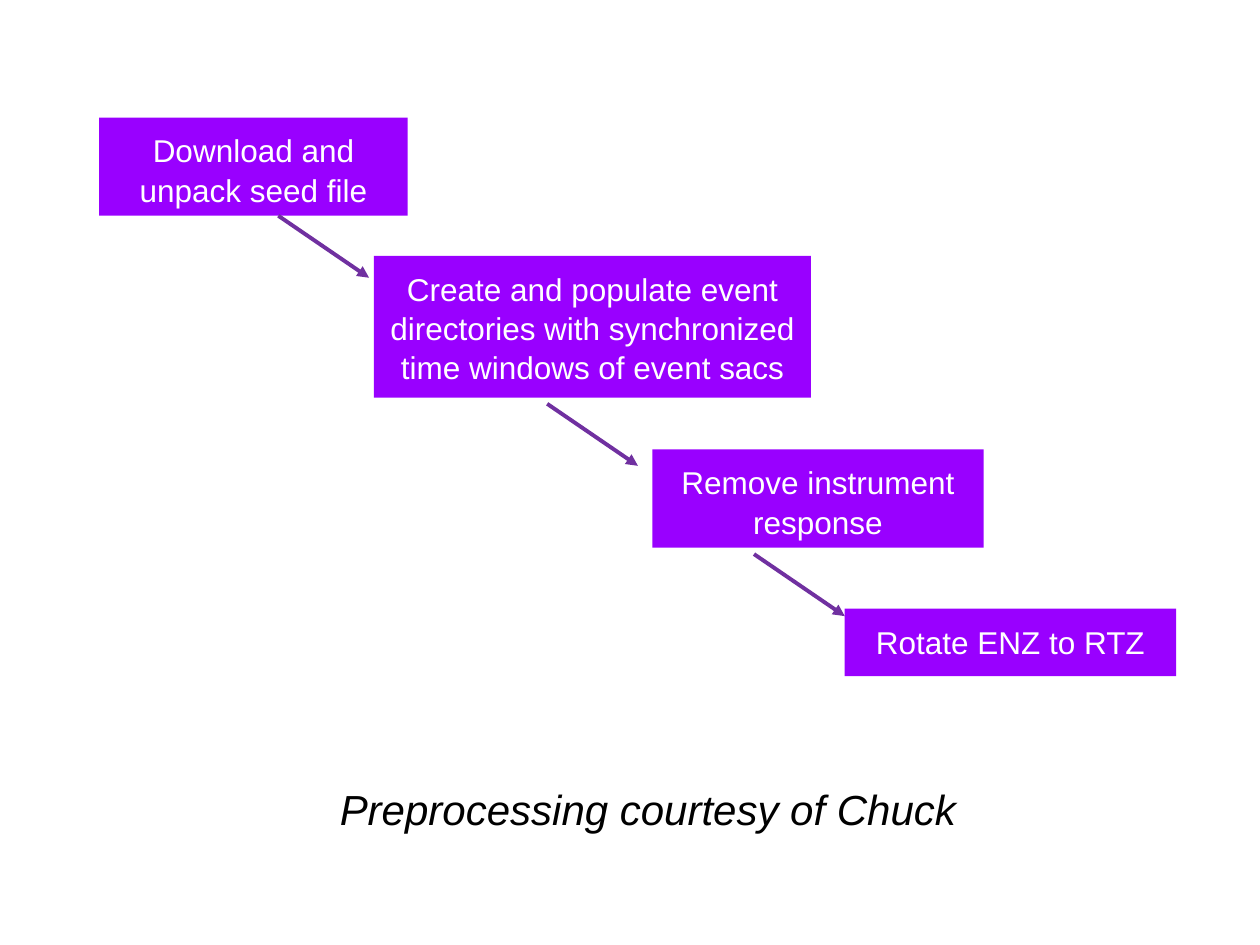
"""Build a slide with a descending chain of preprocessing steps."""
from lxml import etree
from pptx import Presentation
from pptx.dml.color import RGBColor
from pptx.enum.shapes import MSO_CONNECTOR, MSO_SHAPE
from pptx.enum.text import MSO_ANCHOR, PP_ALIGN
from pptx.oxml.ns import qn
from pptx.util import Cm, Pt

RECTANGLE = MSO_SHAPE.RECTANGLE
STRAIGHT = MSO_CONNECTOR.STRAIGHT
TOP = MSO_ANCHOR.TOP
CENTER = PP_ALIGN.CENTER
LEFT = PP_ALIGN.LEFT

VIOLET = RGBColor(0x99, 0x00, 0xFF)
PURPLE = RGBColor(0x70, 0x30, 0xA0)
WHITE = RGBColor(0xFF, 0xFF, 0xFF)
BLACK = RGBColor(0x00, 0x00, 0x00)
FONT = "Arial"

STEPS = [
    ("Download and unpack seed file", 2, 2.37, 6.22, 1.98),
    ("Create and populate event directories with synchronized "
     "time windows of event sacs", 7.54, 5.16, 8.81, 2.86),
    ("Remove instrument response", 13.15, 9.06, 6.68, 1.98),
    ("Rotate ENZ to RTZ", 17.03, 12.27, 6.68, 1.36),
]
ARROW_STARTS = [(5.61, 4.35), (11.03, 8.14), (15.2, 11.17)]
ARROW_RUN, ARROW_DROP = 1.83, 1.25
CREDIT = ("Preprocessing courtesy of Chuck", 6.6, 15.67, 13.06, 1.27)


def write_text(shape, text, size, color, alignment, vertical_margin):
    frame = shape.text_frame
    frame.word_wrap = True
    frame.vertical_anchor = TOP
    frame.margin_left = frame.margin_right = Cm(0.25)
    frame.margin_top = frame.margin_bottom = Cm(vertical_margin)
    paragraph = frame.paragraphs[0]
    paragraph.text = text
    paragraph.alignment = alignment
    paragraph.font.name = FONT
    paragraph.font.size = Pt(size)
    paragraph.font.color.rgb = color
    return paragraph


def add_step(slide, text, *box):
    shape = slide.shapes.add_shape(RECTANGLE, *map(Cm, box))
    shape.shadow.inherit = False
    shape.fill.solid()
    shape.fill.fore_color.rgb = VIOLET
    shape.line.fill.background()
    paragraph = write_text(shape, text, 18, WHITE, CENTER, 0.25)
    paragraph.line_spacing = 1.04


def add_arrow(slide, left, top):
    ends = (left, top, left + ARROW_RUN, top + ARROW_DROP)
    arrow = slide.shapes.add_connector(STRAIGHT, *map(Cm, ends))
    arrow.line.color.rgb = PURPLE
    arrow.line.width = Pt(2.25)
    etree.SubElement(arrow.line._get_or_add_ln(), qn("a:tailEnd"), type="triangle")
    etree.SubElement(arrow._element.spPr, qn("a:effectLst"))


def add_credit(slide, text, *box):
    shape = slide.shapes.add_textbox(*map(Cm, box))
    paragraph = write_text(shape, text, 24, BLACK, LEFT, 0.13)
    paragraph.font.italic = True


def main():
    presentation = Presentation()
    presentation.slide_width = Cm(25.4)
    presentation.slide_height = Cm(19.05)
    slide = presentation.slides.add_slide(presentation.slide_layouts[6])
    for step in STEPS:
        add_step(slide, *step)
    add_credit(slide, *CREDIT)
    for start in ARROW_STARTS:
        add_arrow(slide, *start)
    presentation.save("out.pptx")


if __name__ == "__main__":
    main()
